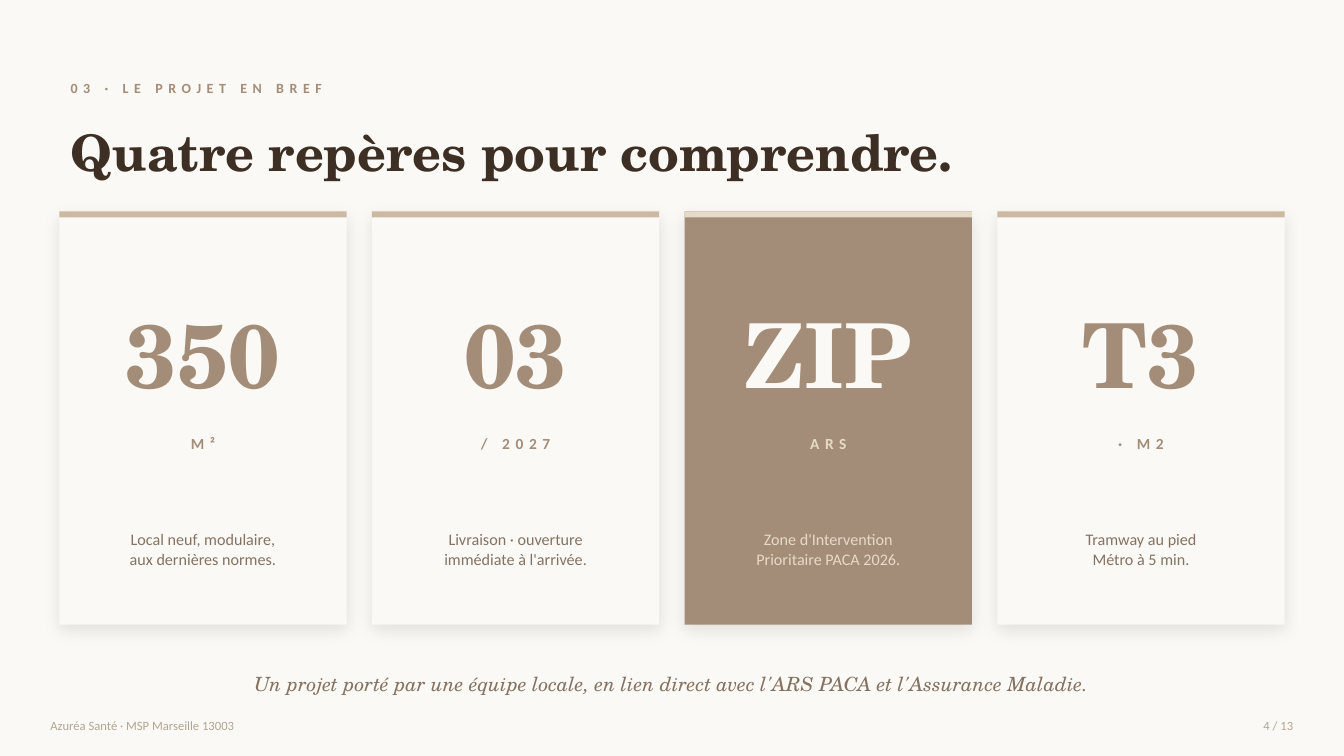
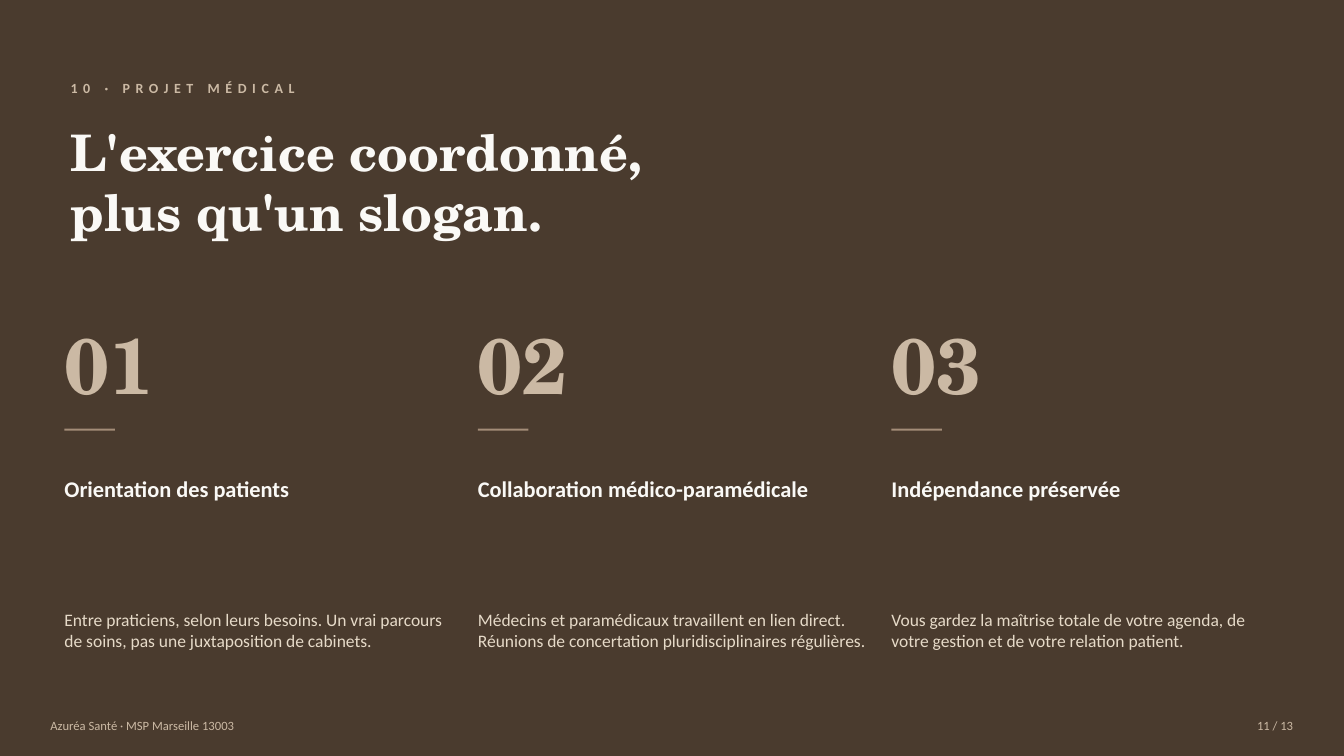
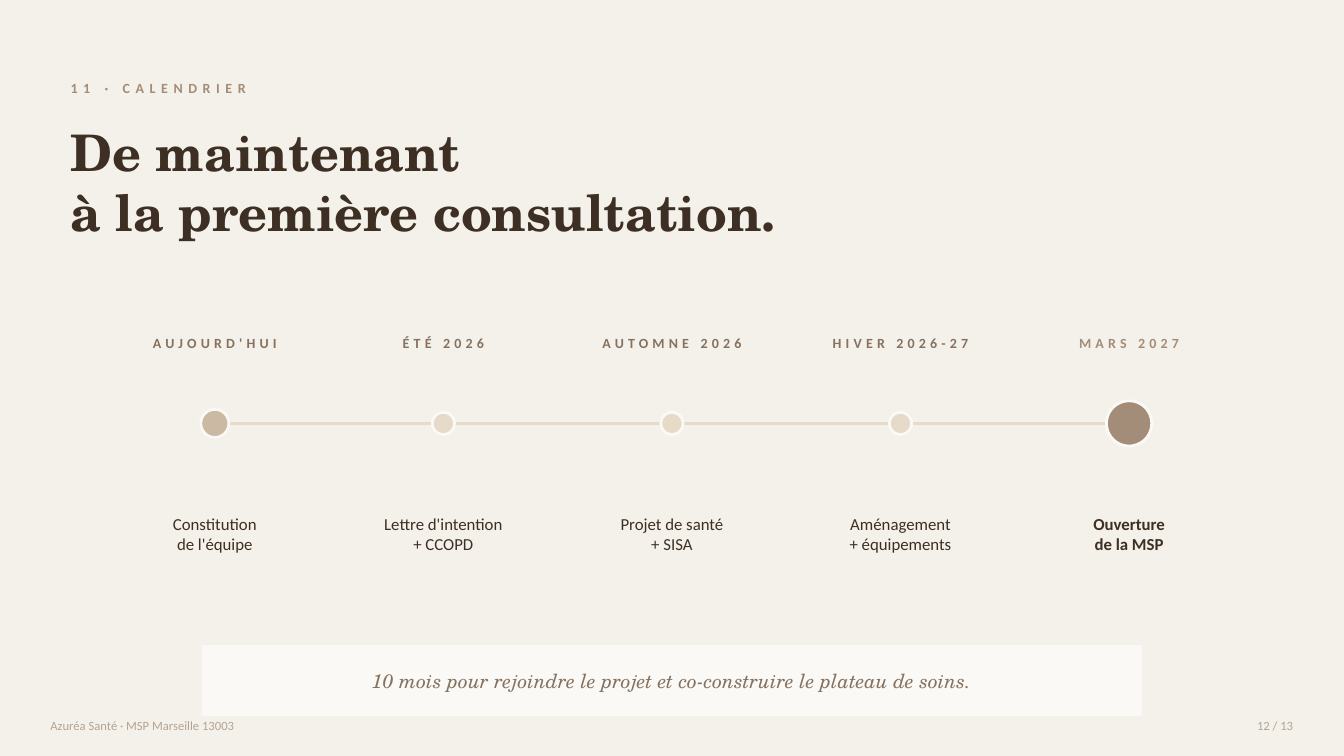
from pptx import Presentation
from pptx.dml.color import RGBColor
from pptx.enum.shapes import MSO_CONNECTOR, MSO_SHAPE
from pptx.enum.text import MSO_ANCHOR, MSO_AUTO_SIZE, PP_ALIGN
from pptx.oxml import parse_xml
from pptx.oxml.ns import nsdecls
from pptx.util import Cm, Pt

RECT, OVAL = MSO_SHAPE.RECTANGLE, MSO_SHAPE.OVAL
STRAIGHT = MSO_CONNECTOR.STRAIGHT
LEFT, MID, RIGHT = PP_ALIGN.LEFT, PP_ALIGN.CENTER, PP_ALIGN.RIGHT
TOP, MIDDLE = MSO_ANCHOR.TOP, MSO_ANCHOR.MIDDLE
NO_FIT = MSO_AUTO_SIZE.NONE

WHITE = RGBColor(0xFA, 0xF9, 0xF6)
CREAM = RGBColor(0xF4, 0xF1, 0xEA)
SAND = RGBColor(0xE6, 0xDA, 0xC8)
TAN = RGBColor(0xCB, 0xB9, 0xA4)
GREY = RGBColor(0xB4, 0xA4, 0x92)
CLAY = RGBColor(0xA4, 0x8D, 0x78)
BROWN = RGBColor(0x85, 0x72, 0x60)
DARK = RGBColor(0x4A, 0x3B, 0x2E)
INK = RGBColor(0x3D, 0x2F, 0x23)

SANS, SERIF = "Calibri", "TeX Gyre Schola"
WIDE, HIGH = 33.87, 19.05
TOTAL = 13
FOOTER = "Azuréa Santé · MSP Marseille 13003"

# Number, unit, lines of the note, highlighted
CARDS = [
    ("350", "M²", ["Local neuf, modulaire,", "aux dernières normes."], False),
    ("03", "/ 2027", ["Livraison · ouverture", "immédiate à l'arrivée."], False),
    ("ZIP", "ARS", ["Zone d'Intervention", "Prioritaire PACA 2026."], True),
    ("T3", "· M2", ["Tramway au pied", "Métro à 5 min."], False),
]
CLOSING = ("Un projet porté par une équipe locale, en lien direct avec "
           "l'ARS PACA et l'Assurance Maladie.")

PILLARS = [
    ("Orientation des patients",
     "Entre praticiens, selon leurs besoins. Un vrai parcours de soins, "
     "pas une juxtaposition de cabinets."),
    ("Collaboration médico-paramédicale",
     "Médecins et paramédicaux travaillent en lien direct. "
     "Réunions de concertation pluridisciplinaires régulières."),
    ("Indépendance préservée",
     "Vous gardez la maîtrise totale de votre agenda, de votre gestion "
     "et de votre relation patient."),
]

# Date, lines of the step, dot size, dot colour
STEPS = [
    ("AUJOURD'HUI", ["Constitution", "de l'équipe"], 0.71, TAN),
    ("ÉTÉ 2026", ["Lettre d'intention", "+ CCOPD"], 0.56, SAND),
    ("AUTOMNE 2026", ["Projet de santé", "+ SISA"], 0.56, SAND),
    ("HIVER 2026-27", ["Aménagement", "+ équipements"], 0.56, SAND),
    ("MARS 2027", ["Ouverture", "de la MSP"], 1.14, CLAY),
]
PROMISE = "10 mois pour rejoindre le projet et co-construire le plateau de soins."


def row(count, width, gap=0):
    """Left edges of equal columns centred on the slide."""
    start = (WIDE - count * width - (count - 1) * gap) / 2
    return [start + i * (width + gap) for i in range(count)]


def write(shape, lines, size, color, face=SANS, align=LEFT, anchor=MIDDLE,
          bold=False, italic=False, track=0):
    """Fill a shape with one paragraph per line; track is in points."""
    frame = shape.text_frame
    frame.word_wrap = True
    frame.auto_size = NO_FIT
    frame.vertical_anchor = anchor
    frame.margin_left = frame.margin_right = 0
    frame.margin_top = frame.margin_bottom = 0
    for i, line in enumerate(lines):
        para = frame.add_paragraph() if i else frame.paragraphs[0]
        para.alignment = align
        run = para.add_run()
        run.text = line
        font = run.font
        font.name, font.size, font.color.rgb = face, Pt(size), color
        font.bold, font.italic = bold, italic
        if track:
            run._r.get_or_add_rPr().set("spc", str(track * 100))


def label(slide, box, lines, size, color, **style):
    shape = slide.shapes.add_textbox(*map(Cm, box))
    write(shape, lines, size, color, **style)


def block(slide, box, fill, kind=RECT, line=None):
    shape = slide.shapes.add_shape(kind, *map(Cm, box))
    shape.shadow.inherit = False
    shape.fill.solid()
    shape.fill.fore_color.rgb = fill
    if line is None:
        shape.line.fill.background()
    else:
        shape.line.color.rgb = line
        shape.line.width = Pt(2)
    return shape


def shade(shape):
    """Add a soft shadow below the shape."""
    shape._element.spPr.find("{*}effectLst").append(parse_xml(
        f'<a:outerShdw {nsdecls("a")} blurRad="{Pt(12)}" dist="{Pt(4)}" '
        'dir="5400000" algn="ctr" rotWithShape="0"><a:srgbClr val="000000">'
        '<a:alpha val="10000"/></a:srgbClr></a:outerShdw>'))


def page(deck, number, tag, title, back, accent=CLAY, ink=INK, foot=GREY):
    """Add a slide with its background, tag, title and footer."""
    slide = deck.slides.add_slide(deck.slide_layouts[5])
    slide.background.fill.solid()
    slide.background.fill.fore_color.rgb = back
    head = slide.shapes.title
    head.left, head.top, head.width, head.height = map(
        Cm, (1.78, 3.05, 27.94, 3.05))
    write(head, title, 36, ink, face=SERIF, anchor=TOP, bold=True)
    label(slide, (1.78, 1.78, 15.24, 0.89), [tag], 10, accent,
          bold=True, track=4)
    label(slide, (1.27, 17.91, 15.24, 0.76), [FOOTER], 9, foot)
    label(slide, (30.05, 17.91, 2.54, 0.76), [f"{number} / {TOTAL}"], 9, foot,
          align=RIGHT)
    return slide


def brief(deck):
    slide = page(deck, 4, "03 · LE PROJET EN BREF",
                 ["Quatre repères pour comprendre."], WHITE)
    width, top, pad = 7.24, 5.33, 0.51
    for x, (number, unit, note, bright) in zip(row(4, width, 0.64), CARDS):
        fill, strip, main, sub, body = (
            (CLAY, SAND, WHITE, SAND, SAND) if bright
            else (WHITE, TAN, CLAY, CLAY, BROWN))
        shade(block(slide, (x, top, width, 10.41), fill))
        block(slide, (x, top, width, 0.15), strip)
        label(slide, (x, 6.86, width, 4.06), [number], 64, main,
              face=SERIF, align=MID, bold=True)
        label(slide, (x, 10.67, width, 1.02), [unit], 11, sub,
              align=MID, bold=True, track=4)
        label(slide, (x + pad, 12.19, width - 2 * pad, 3.3), note, 11.5, body,
              align=MID)
    label(slide, (2.54, 16.59, 28.78, 1.27), [CLOSING], 14, BROWN,
          face=SERIF, align=MID, italic=True)


def project(deck):
    slide = page(deck, 11, "10 · PROJET MÉDICAL",
                 ["L'exercice coordonné,", "plus qu'un slogan."],
                 DARK, accent=TAN, ink=WHITE, foot=TAN)
    width = 9.78
    columns = zip(row(3, width, 0.64), PILLARS)
    for i, (x, (name, body)) in enumerate(columns, 1):
        label(slide, (x, 7.62, width, 3.05), [f"{i:02}"], 56, TAN,
              face=SERIF, bold=True)
        block(slide, (x, 10.8, 1.27, 0.05), CLAY)
        label(slide, (x, 11.43, width, 1.78), [name], 16, WHITE, bold=True)
        label(slide, (x, 13.72, width, 4.32), [body], 12.5, SAND)


def calendar(deck):
    slide = page(deck, 12, "11 · CALENDRIER",
                 ["De maintenant", "à la première consultation."], CREAM)
    width, axis = 5.76, 10.67
    lefts = row(len(STEPS), width)
    mids = [x + width / 2 for x in lefts]
    line = slide.shapes.add_connector(
        STRAIGHT, Cm(mids[0]), Cm(axis), Cm(mids[-1]), Cm(axis))
    line.line.color.rgb = SAND
    line.line.width = Pt(2)
    line._element.spPr.append(parse_xml(f'<a:effectLst {nsdecls("a")}/>'))
    for x, mid, (date, step, size, color) in zip(lefts, mids, STEPS):
        last = x == lefts[-1]
        label(slide, (x, 8.13, width, 1.02), [date], 10,
              CLAY if last else BROWN, align=MID, bold=True, track=3)
        block(slide, (mid - size / 2, axis - size / 2, size, size), color,
              kind=OVAL, line=WHITE)
        label(slide, (x, 11.68, width, 3.56), step, 12, INK,
              align=MID, bold=last)
    banner = block(slide, (5.08, 16.26, 23.7, 1.78), WHITE)
    write(banner, [PROMISE], 14, BROWN, face=SERIF, align=MID, italic=True)


def main():
    deck = Presentation()
    deck.slide_width, deck.slide_height = Cm(WIDE), Cm(HIGH)
    brief(deck)
    project(deck)
    calendar(deck)
    deck.save("out.pptx")


if __name__ == "__main__":
    main()
